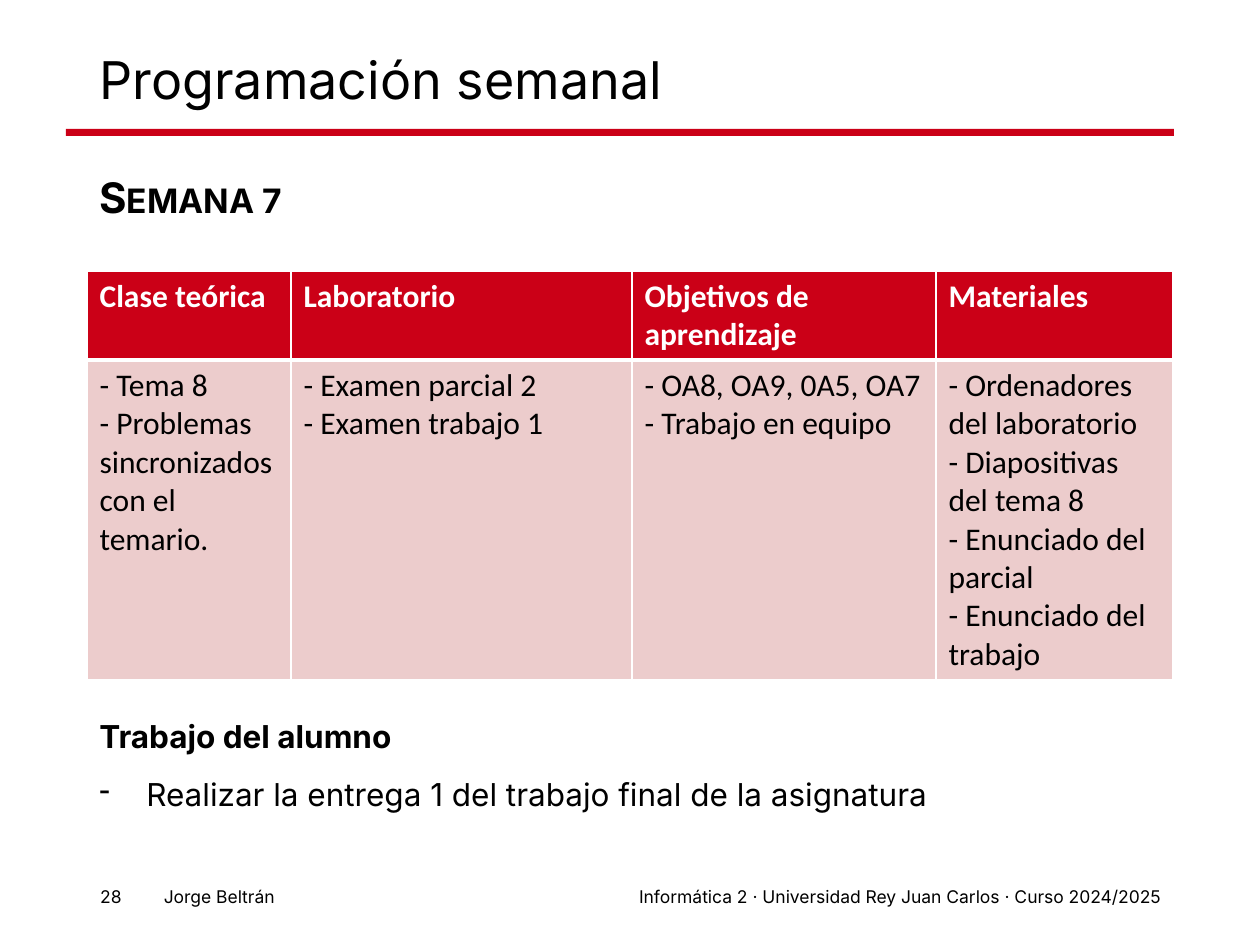
from dataclasses import dataclass

from lxml.etree import SubElement
from pptx import Presentation
from pptx.dml.color import RGBColor as RGB
from pptx.enum.shapes import MSO_SHAPE as Shape
from pptx.enum.text import MSO_ANCHOR as Anchor, PP_ALIGN as Align
from pptx.oxml.ns import qn
from pptx.util import Pt

SCALE = 914400 / 126


def px(n):
    return round(n * SCALE)


@dataclass(frozen=True)
class Theme:
    font: str = "Inter"
    table_font: str = "Calibri"
    red: str = "CB0017"
    pink: str = "ECCCCC"
    black: str = "000000"
    white: str = "FFFFFF"
    title: float = 29.7
    heading: int = 24
    body: int = 18
    footer: int = 10


class Deck:
    def __init__(self, prs, theme):
        self.theme = theme
        self.s = prs.slides.add_slide(prs.slide_layouts[6])

    def run(self, p, text, size, color=None, bold=False, font=None):
        r = p.add_run()
        r.text = text
        r.font.name = font or self.theme.font
        r.font.size = Pt(size)
        r.font.bold = bold
        r.font.color.rgb = RGB.from_string(color or self.theme.black)
        return r

    def bar(self, *box):
        sp = self.s.shapes.add_shape(Shape.RECTANGLE, *map(px, box))
        sp.shadow.inherit = False
        sp.fill.solid()
        sp.fill.fore_color.rgb = RGB.from_string(self.theme.red)
        sp.line.fill.background()

    def box(self, *box, anchor=Anchor.TOP):
        tf = self.s.shapes.add_textbox(*map(px, box)).text_frame
        tf.word_wrap = True
        tf.vertical_anchor = anchor
        return tf

    def title(self, text, *box):
        p = self.box(*box, anchor=Anchor.MIDDLE).paragraphs[0]
        p.line_spacing = 0.9
        self.run(p, text, self.theme.title)

    def footer(self, text, *box):
        p = self.box(*box).paragraphs[0]
        p.alignment = Align.RIGHT
        self.run(p, text, self.theme.footer)

    def spaced(self, p):
        p.line_spacing = 1.2
        p.space_before = Pt(7.5)
        return p

    def heading(self, text, *box):
        p = self.spaced(self.box(*box).paragraphs[0])
        r = self.run(p, text, self.theme.heading, bold=True)
        r.font._element.set("cap", "small")

    def tasks(self, heading, items, *box):
        tf = self.box(*box)
        self.run(self.spaced(tf.paragraphs[0]), heading, self.theme.body, bold=True)
        for item in items:
            p = self.spaced(tf.add_paragraph())
            pPr = p._p.get_or_add_pPr()
            pPr.set("marL", str(px(47)))
            pPr.set("indent", str(-px(47)))
            SubElement(pPr, qn("a:buChar"), char="-")
            self.run(p, item, self.theme.body)

    def borders(self, cell, bottom):
        tcPr = cell._tc.get_or_add_tcPr()
        for side, width in zip("LRTB", (1, 1, 1, bottom)):
            ln = SubElement(tcPr, qn(f"a:ln{side}"), w=str(Pt(width)))
            SubElement(SubElement(ln, qn("a:solidFill")), qn("a:srgbClr"), val=self.theme.white)

    def cell(self, cell, lines, header):
        t = self.theme
        self.borders(cell, 3 if header else 1)
        cell.fill.solid()
        cell.fill.fore_color.rgb = RGB.from_string(t.red if header else t.pink)
        tf = cell.text_frame
        for i, line in enumerate(lines):
            p = tf.add_paragraph() if i else tf.paragraphs[0]
            self.run(p, line, t.body, t.white if header else t.black, header, t.table_font)

    def table(self, columns, widths, heights, left, top):
        frame = self.s.shapes.add_table(
            len(heights), len(widths), px(left), px(top), px(sum(widths)), px(sum(heights)))
        tbl = frame.table
        for row, height in zip(tbl.rows, heights):
            row.height = px(height)
        for i, (name, lines) in enumerate(columns.items()):
            tbl.columns[i].width = px(widths[i])
            self.cell(tbl.cell(0, i), [name], True)
            self.cell(tbl.cell(1, i), lines, False)


def main():
    prs = Presentation()
    prs.slide_width, prs.slide_height = px(1260), px(945)
    deck = Deck(prs, Theme())
    deck.bar(66, 129, 1108, 7)
    deck.footer("Informática 2 · Universidad Rey Juan Carlos · Curso 2024/2025", 319, 880, 854, 34)
    deck.footer("28", 73, 880, 61, 34)
    deck.footer("Jorge Beltrán", 26, 880, 261, 34)
    deck.title("Programación semanal", 87, 50, 1086, 66)
    week = {
        "Clase teórica": ["- Tema 8", "- Problemas sincronizados con el temario."],
        "Laboratorio": ["- Examen parcial 2", "- Examen trabajo 1"],
        "Objetivos de aprendizaje": ["- OA8, OA9, 0A5, OA7", "- Trabajo en equipo"],
        "Materiales": [
            "- Ordenadores del laboratorio",
            "- Diapositivas del tema 8",
            "- Enunciado del parcial",
            "- Enunciado del trabajo",
        ],
    }
    deck.table(week, (204, 341, 304, 237), (89, 320), 87, 271)
    deck.tasks("Trabajo del alumno", ["Realizar la entrega 1 del trabajo final de la asignatura"],
               87, 703, 1086, 158)
    deck.heading("Semana 7", 87, 155, 1086, 86)
    prs.save("out.pptx")


if __name__ == "__main__":
    main()
